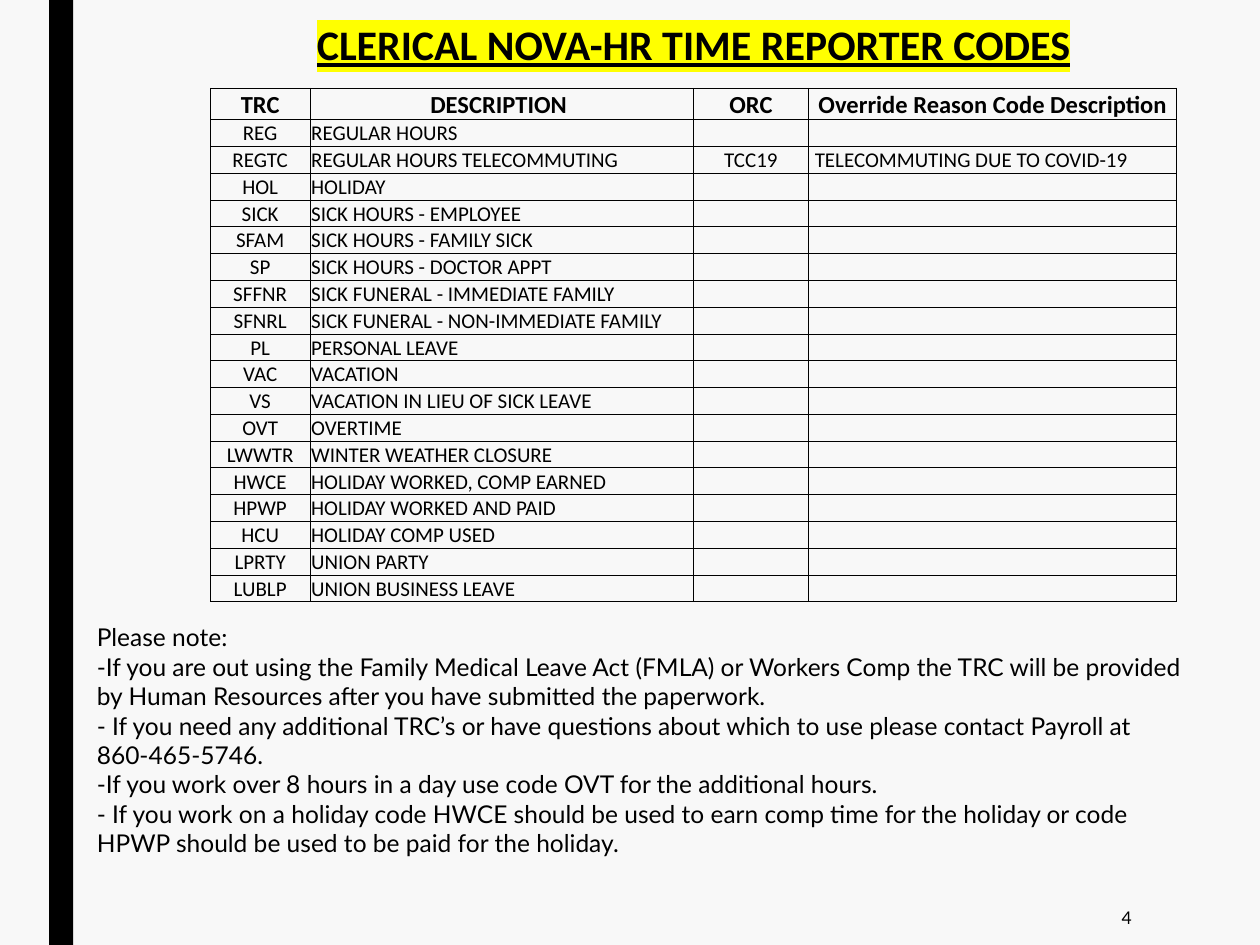
import pptx
import pptx.util
import pptx.dml.color
import pptx.enum.shapes
import pptx.enum.text
import pptx.oxml.ns
import lxml.etree

Inches = pptx.util.Inches
Pt = pptx.util.Pt
ANCHOR = pptx.enum.text.MSO_ANCHOR
ALIGN = pptx.enum.text.PP_ALIGN

# Content
TITLE = "CLERICAL NOVA-HR TIME REPORTER CODES"
HEADERS = ["TRC", "DESCRIPTION ", "ORC", "Override Reason Code Description"]
CODES = [
    ("REG", "REGULAR HOURS"),
    ("REGTC", "REGULAR HOURS TELECOMMUTING", "TCC19", " TELECOMMUTING DUE TO COVID-19"),
    ("HOL", "HOLIDAY"),
    ("SICK", "SICK HOURS - EMPLOYEE"),
    ("SFAM", "SICK HOURS - FAMILY SICK"),
    ("SP", "SICK HOURS - DOCTOR APPT"),
    ("SFFNR", "SICK FUNERAL - IMMEDIATE FAMILY"),
    ("SFNRL", "SICK FUNERAL - NON-IMMEDIATE FAMILY"),
    ("PL", "PERSONAL LEAVE"),
    ("VAC", "VACATION"),
    ("VS", "VACATION IN LIEU OF SICK LEAVE"),
    ("OVT", "OVERTIME"),
    ("LWWTR", "WINTER WEATHER CLOSURE"),
    ("HWCE", "HOLIDAY WORKED, COMP EARNED"),
    ("HPWP", "HOLIDAY WORKED AND PAID"),
    ("HCU", "HOLIDAY COMP USED"),
    ("LPRTY", "UNION PARTY"),
    ("LUBLP", "UNION BUSINESS LEAVE"),
]
NOTES = [
    "Please note:",
    "-If you are out using the Family Medical Leave Act (FMLA) or Workers Comp the TRC will be "
    "provided by Human Resources after you have submitted the paperwork.",
    "- If you need any additional TRC’s or have questions about which to use please contact "
    "Payroll at\n860-465-5746.",
    "-If you work over 8 hours in a day use code OVT for the additional hours.",
    "- If you work on a holiday code HWCE should be used to earn comp time for the holiday or "
    "code HPWP should be used to be paid for the holiday.",
]
PAGE_NUMBER = "4"

THEME = {
    "background": "F8F8F8", "ink": "000000", "highlight": "FFFF00",
    "table_font": "Calibri", "text_font": "Lato",
    "title": 24, "header": 14, "code": 12, "spacer": 1, "notes": 14, "page": 10,
    "rule": 0.5,
}
COLUMN_WIDTHS = [0.79, 3.04, 0.92, 2.92]
TITLE_HEIGHT, SPACER_HEIGHT, HEADER_HEIGHT = 0.42, 0.13, 0.25
CODE_HEIGHT = 3.83 / len(CODES)
CENTERED_COLUMNS = (0, 2)


def rgb(name):
    return pptx.dml.color.RGBColor.from_string(THEME[name])


def add_xml(parent, tag, **attributes):
    return lxml.etree.SubElement(parent, pptx.oxml.ns.qn(tag), attributes)


def format_runs(paragraph, font, size, bold=False):
    for run in paragraph.runs:
        run.font.name = font
        run.font.size = Pt(size)
        run.font.bold = bold
        run.font.color.rgb = rgb("ink")


def add_text(slide, box, lines, size, align=ALIGN.LEFT, anchor=ANCHOR.TOP):
    shape = slide.shapes.add_textbox(*map(Inches, box))
    frame = shape.text_frame
    frame.word_wrap = True
    frame.vertical_anchor = anchor
    for index, line in enumerate(lines):
        paragraph = frame.add_paragraph() if index else frame.paragraphs[0]
        paragraph.text = line
        paragraph.alignment = align
        format_runs(paragraph, THEME["text_font"], size)


def set_borders(cell, visible_sides):
    properties = cell._tc.get_or_add_tcPr()
    for side in "LRTB":
        line = add_xml(properties, f"a:ln{side}", w=str(Pt(THEME["rule"])))
        if side in visible_sides:
            fill = add_xml(line, "a:solidFill")
            add_xml(fill, "a:srgbClr", val=THEME["ink"])
        else:
            add_xml(line, "a:noFill")


def fill_cell(cell, text, size, bold=False, centered=False, borders=""):
    set_borders(cell, borders)
    cell.fill.background()
    cell.vertical_anchor = ANCHOR.BOTTOM
    cell.margin_left = cell.margin_right = cell.margin_top = Inches(0.01)
    cell.margin_bottom = 0
    paragraph = cell.text_frame.paragraphs[0]
    paragraph.alignment = ALIGN.CENTER if centered else ALIGN.LEFT
    if text:
        paragraph.text = text
        format_runs(paragraph, THEME["table_font"], size, bold)
    else:
        # An empty cell must not be taller than its row
        add_xml(paragraph._p, "a:endParaRPr", sz=str(size * 100))


def highlight_title(run):
    run.font.underline = True
    highlight = lxml.etree.Element(pptx.oxml.ns.qn("a:highlight"))
    add_xml(highlight, "a:srgbClr", val=THEME["highlight"])
    run.font._element.find(pptx.oxml.ns.qn("a:solidFill")).addnext(highlight)


def add_code_table(slide):
    heights = [TITLE_HEIGHT, SPACER_HEIGHT, HEADER_HEIGHT] + [CODE_HEIGHT] * len(CODES)
    table = slide.shapes.add_table(
        len(heights), len(COLUMN_WIDTHS), Inches(1.67), Inches(0.15),
        Inches(sum(COLUMN_WIDTHS)), Inches(sum(heights))).table
    table.first_row = table.horz_banding = False
    for column, width in zip(table.columns, COLUMN_WIDTHS):
        column.width = Inches(width)
    for row, height in zip(table.rows, heights):
        row.height = Inches(height)

    # Title across all columns, then a thin spacer row
    for index in range(len(COLUMN_WIDTHS)):
        title = TITLE if index == 0 else ""
        fill_cell(table.cell(0, index), title, THEME["title"], bold=True, centered=True)
        fill_cell(table.cell(1, index), "", THEME["spacer"], borders="B")
    table.cell(0, 0).merge(table.cell(0, len(COLUMN_WIDTHS) - 1))
    highlight_title(table.cell(0, 0).text_frame.paragraphs[0].runs[0])

    # Header and codes
    for index, text in enumerate(HEADERS):
        fill_cell(table.cell(2, index), text, THEME["header"], True, True, "LRTB")
    for row, code in enumerate(CODES, start=3):
        for index in range(len(COLUMN_WIDTHS)):
            text = code[index] if index < len(code) else ""
            fill_cell(table.cell(row, index), text, THEME["code"],
                      centered=index in CENTERED_COLUMNS, borders="LRTB")


def main():
    presentation = pptx.Presentation()
    presentation.slide_width, presentation.slide_height = Inches(10), Inches(7.5)
    slide = presentation.slides.add_slide(presentation.slide_layouts[6])
    slide.background.fill.solid()
    slide.background.fill.fore_color.rgb = rgb("background")

    # Side bar
    bar = slide.shapes.add_shape(pptx.enum.shapes.MSO_SHAPE.RECTANGLE,
                                 Inches(0.39), 0, Inches(0.19), Inches(7.5))
    bar.shadow.inherit = False
    bar.fill.solid()
    bar.fill.fore_color.rgb = rgb("ink")
    bar.line.fill.background()

    # Page number, notes and table
    add_text(slide, (7.77, 7.06, 1.31, 0.44), [PAGE_NUMBER], THEME["page"],
             ALIGN.RIGHT, ANCHOR.MIDDLE)
    add_text(slide, (0.67, 4.89, 8.92, 2.46), NOTES, THEME["notes"])
    add_code_table(slide)
    presentation.save("out.pptx")


if __name__ == "__main__":
    main()
